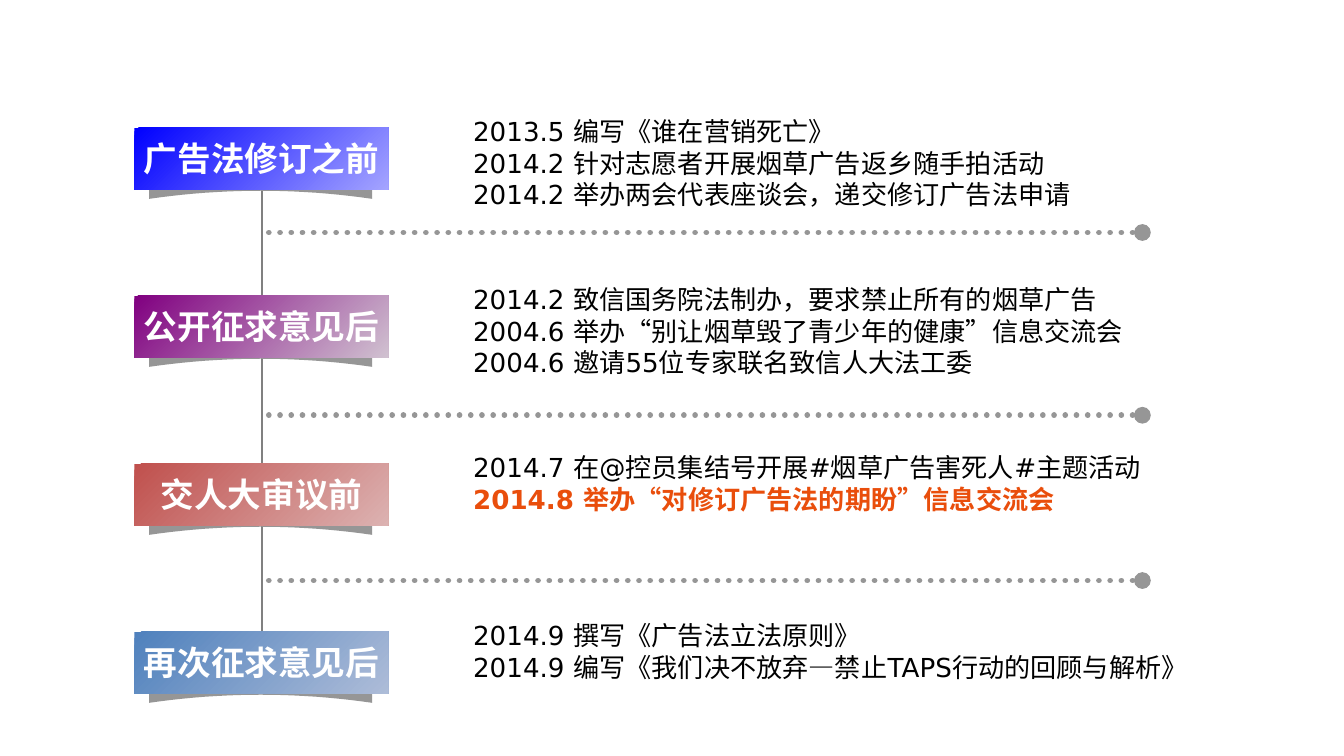
from dataclasses import dataclass

from lxml.etree import SubElement
from pptx import Presentation
from pptx.dml.color import RGBColor as Rgb
from pptx.enum.dml import MSO_LINE_DASH_STYLE as Dash
from pptx.enum.lang import MSO_LANGUAGE_ID as Lang
from pptx.enum.shapes import MSO_CONNECTOR as Conn, MSO_SHAPE as Kind
from pptx.enum.text import MSO_ANCHOR as Anchor, MSO_AUTO_SIZE as Fit, PP_ALIGN as Align
from pptx.oxml.ns import qn
from pptx.util import Inches, Pt


@dataclass(frozen=True)
class Theme:
    ink: str = "000000"
    hot: str = "E94E0C"
    white: str = "FFFFFF"
    stem: str = "808080"
    gray: str = "969696"
    head_font: str = "Calibri"
    body_font: str = "DejaVu Sans"
    head_size: int = 18
    body_size: int = 14


def apply(obj, **vals):
    for key, val in vals.items():
        setattr(obj, key, val)


class Deck:
    def __init__(self, theme):
        self.theme = theme
        self.prs = Presentation()
        # Widescreen, 16 to 9
        apply(self.prs, slide_width=Inches(10), slide_height=Inches(10 * 9 / 16))
        # The comparison layout offers four body placeholders
        self.slide = self.prs.slides.add_slide(self.prs.slide_layouts[4])
        title = self.slide.shapes.title.element
        title.getparent().remove(title)
        self.shapes = self.slide.shapes
        self.bodies = list(self.slide.placeholders)

    def style(self, para, name, size, color, bold):
        apply(para.font, name=name, size=Pt(size), bold=bold)
        para.font.color.rgb = Rgb.from_string(color)
        for run in para.runs:
            run.font.language_id = Lang.SIMPLIFIED_CHINESE

    def line(self, start, end, color, width, dotted=False):
        link = self.shapes.add_connector(
            Conn.STRAIGHT, *(Inches(v) for v in start + end))
        link.line.color.rgb = Rgb.from_string(color)
        link.line.width = Pt(width)
        props = link.element.spPr
        if dotted:
            link.line.dash_style = Dash.ROUND_DOT
            stroke = props.find(qn("a:ln"))
            stroke.set("cap", "rnd")
            SubElement(stroke, qn("a:tailEnd"), type="oval")
        SubElement(props, qn("a:effectLst"))

    def ribbon(self, top):
        """Curved shade below a banner: pointed top, arched lower edge."""
        mid, half, steps = 1.94, 0.83, 10
        marks = [(mid - half, top + 0.06), (mid, top), (mid + half, top + 0.06)]
        for i in range(steps, -steps - 1, -1):
            t = i / steps
            marks.append((mid + half * t, top + 0.17 + 0.06 * t * t))
        marks = [(Inches(x), Inches(y)) for x, y in marks]
        pen = self.shapes.build_freeform(*marks[0])
        pen.add_line_segments(marks[1:], close=True)
        shade = pen.convert_to_shape()
        shade.shadow.inherit = False
        shade.fill.solid()
        shade.fill.fore_color.rgb = Rgb.from_string(self.theme.gray)
        shade.line.fill.background()

    def banner(self, top, label, colors):
        box = self.shapes.add_shape(
            Kind.RECTANGLE, Inches(1), Inches(top), Inches(1.89), Inches(0.46))
        box.shadow.inherit = False
        box.line.fill.background()
        box.fill.gradient()
        box.fill.gradient_angle = 315
        for stop, color in zip(box.fill.gradient_stops, colors):
            stop.color.rgb = Rgb.from_string(color)
        frame = box.text_frame
        apply(frame, word_wrap=False, vertical_anchor=Anchor.MIDDLE, text=label)
        para = frame.paragraphs[0]
        para.alignment = Align.CENTER
        look = self.theme
        self.style(para, look.head_font, look.head_size, look.white, True)

    def notes(self, body, top, width, height, lines, hot):
        apply(body, left=Inches(3.42), top=Inches(top),
              width=Inches(width), height=Inches(height))
        frame = body.text_frame
        apply(frame, text="\n".join(lines), word_wrap=True,
              auto_size=Fit.NONE, vertical_anchor=Anchor.TOP)
        look = self.theme
        for i, para in enumerate(frame.paragraphs):
            props = para._p.get_or_add_pPr()
            for key in ("marL", "indent"):
                props.set(key, "0")
            apply(para, space_before=Pt(0), alignment=Align.LEFT)
            SubElement(props, qn("a:buNone"))
            color = look.hot if i == hot else look.ink
            self.style(para, look.body_font, look.body_size, color, i == hot)


# Stages: label, gradient, list width, list height, lines, highlighted line
STAGES = [
    ("广告法修订之前", ("0000FF", "A4A4FF"), 4.91, 0.81,
     ["2013.5 编写《谁在营销死亡》",
      "2014.2 针对志愿者开展烟草广告返乡随手拍活动",
      "2014.2 举办两会代表座谈会，递交修订广告法申请"], None),
    ("公开征求意见后", ("800080", "D0C1D0"), 5.09, 0.81,
     ["2014.2 致信国务院法制办，要求禁止所有的烟草广告",
      "2004.6 举办“别让烟草毁了青少年的健康”信息交流会",
      "2004.6 邀请55位专家联名致信人大法工委"], None),
    ("交人大审议前", ("C0504D", "DCB2B1"), 5.41, 0.57,
     ["2014.7 在@控员集结号开展#烟草广告害死人#主题活动",
      "2014.8 举办“对修订广告法的期盼”信息交流会"], 1),
    ("再次征求意见后", ("4F81BD", "ADBCD8"), 5.59, 0.57,
     ["2014.9 撰写《广告法立法原则》",
      "2014.9 编写《我们决不放弃—禁止TAPS行动的回顾与解析》"], None),
]


def main():
    theme = Theme()
    deck = Deck(theme)

    # Timeline stem
    deck.line((1.95, 1.36), (1.95, 4.78), theme.stem, 1.5)

    # Stages at an equal pitch
    for i, (label, colors, width, height, lines, hot) in enumerate(STAGES):
        top = 0.95 + 1.25 * i
        deck.ribbon(top + 0.3)
        deck.banner(top, label, colors)
        deck.notes(deck.bodies[i], top - 0.14, width, height, lines, hot)

    # Dotted dividers
    for y in (1.73, 3.09, 4.32):
        deck.line((2, y), (8.5, y), theme.gray, 3, dotted=True)

    deck.prs.save("out.pptx")


if __name__ == "__main__":
    main()
